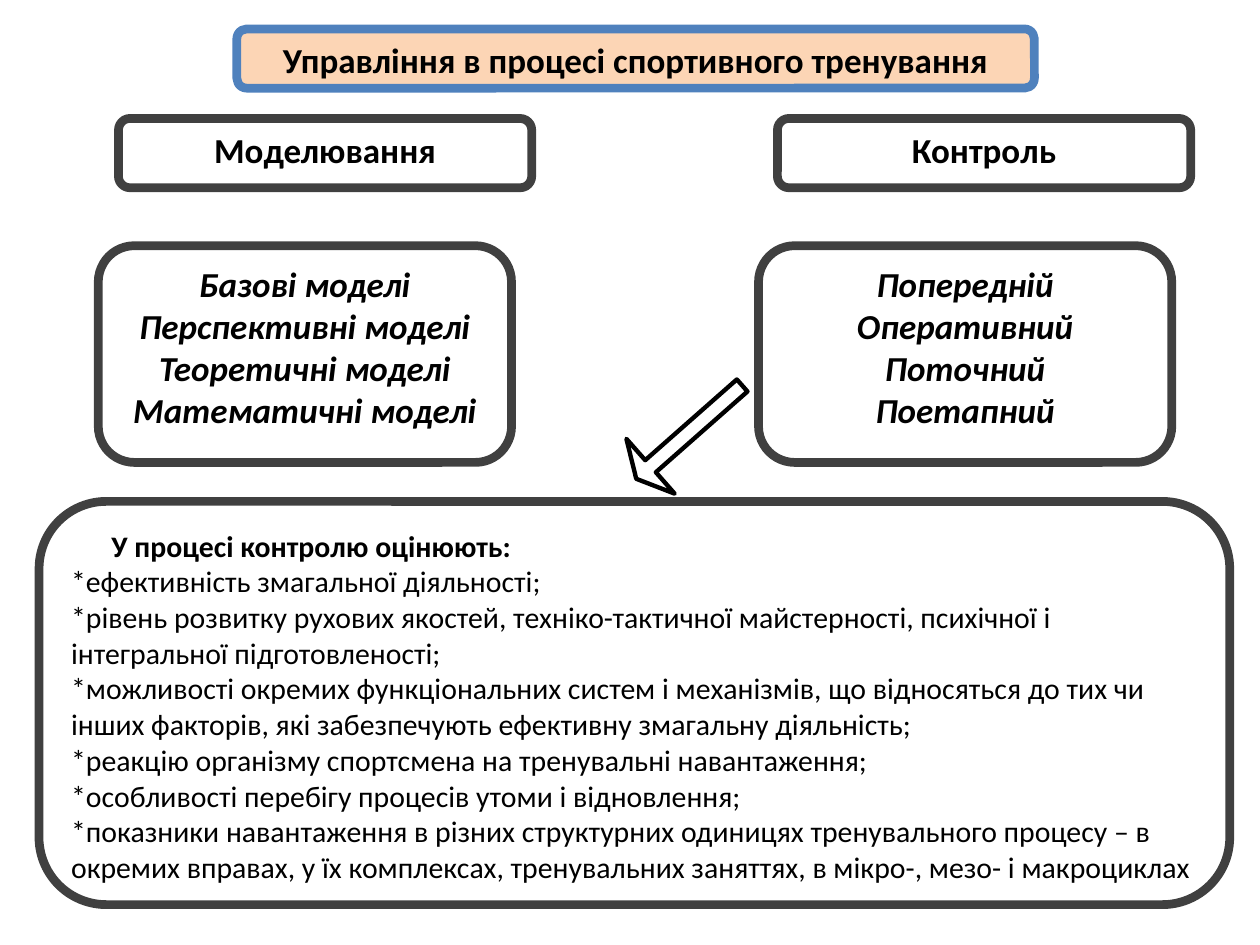
"""Build a slide on management in the process of sports training."""
from dataclasses import dataclass

from pptx import Presentation
from pptx.dml.color import RGBColor
from pptx.enum.shapes import MSO_SHAPE
from pptx.enum.text import MSO_ANCHOR, PP_ALIGN
from pptx.util import Inches, Pt

ROUNDED = MSO_SHAPE.ROUNDED_RECTANGLE
DOWN_ARROW = MSO_SHAPE.DOWN_ARROW
TOP = MSO_ANCHOR.TOP
CENTER, LEFT = PP_ALIGN.CENTER, PP_ALIGN.LEFT

BLACK, WHITE, GRAY = "000000", "FFFFFF", "404040"
PEACH, BLUE = "FCD5B5", "4F81BD"
FONT = "Calibri"
COLUMN_WIDTH = 3.28
HEADING_TOP, HEADING_HEIGHT = 0.94, 0.55
LIST_TOP, LIST_HEIGHT = 1.95, 1.72


@dataclass(frozen=True)
class Frame:
    left: float
    top: float
    width: float
    height: float


@dataclass(frozen=True)
class Branch:
    heading: str
    kinds: tuple[str, ...]
    heading_left: float
    list_left: float


BRANCHES = (
    Branch(
        "Моделювання",
        ("Базові моделі", "Перспективні моделі", "Теоретичні моделі", "Математичні моделі"),
        0.94, 0.78,
    ),
    Branch(
        "Контроль",
        ("Попередній", "Оперативний", "Поточний", "Поетапний"),
        6.17, 6.02,
    ),
)

CRITERIA = (
    "ефективність змагальної діяльності;",
    "рівень розвитку рухових якостей, техніко-тактичної майстерності, "
    "психічної і інтегральної підготовленості;",
    "можливості окремих функціональних систем і механізмів, що відносяться до тих чи "
    "інших факторів, які забезпечують ефективну змагальну діяльність;",
    "реакцію організму спортсмена на тренувальні навантаження;",
    "особливості перебігу процесів утоми і відновлення;",
    "показники навантаження в різних структурних одиницях тренувального процесу – в "
    "окремих вправах, у їх комплексах, тренувальних заняттях, в мікро-, мезо- і макроциклах",
)


def color(value: str) -> RGBColor:
    """Turn a hex string into a colour."""
    return RGBColor.from_string(value)


def add_outlined(slide, kind, frame: Frame, fill: str = WHITE,
                 line: str = GRAY, line_width: float = 5):
    """Draw a filled and outlined preset shape."""
    shape = slide.shapes.add_shape(
        kind, Inches(frame.left), Inches(frame.top), Inches(frame.width), Inches(frame.height)
    )
    shape.shadow.inherit = False
    shape.fill.solid()
    shape.fill.fore_color.rgb = color(fill)
    shape.line.color.rgb = color(line)
    shape.line.width = Pt(line_width)
    return shape


def write(shape, *lines: str, size: float = 20, bold: bool = True, italic: bool = False,
          align=CENTER, first_indent: float = 0, first_bold: bool = False) -> None:
    """Write one paragraph per line, with an optional indented bold opening."""
    text_frame = shape.text_frame
    text_frame.word_wrap = True
    text_frame.vertical_anchor = TOP
    for index, line in enumerate(lines):
        opening = index == 0
        paragraph = text_frame.paragraphs[0] if opening else text_frame.add_paragraph()
        paragraph.alignment = align
        if opening and first_indent:
            paragraph._p.get_or_add_pPr().set("indent", str(Inches(first_indent)))
        run = paragraph.add_run()
        run.text = line
        run.font.name = FONT
        run.font.size = Pt(size)
        run.font.bold = bold or (opening and first_bold)
        run.font.italic = italic
        run.font.color.rgb = color(BLACK)


def add_branch(slide, branch: Branch) -> None:
    """Draw a branch heading and the list of its kinds."""
    heading = Frame(branch.heading_left, HEADING_TOP, COLUMN_WIDTH, HEADING_HEIGHT)
    write(add_outlined(slide, ROUNDED, heading), branch.heading)
    kinds = Frame(branch.list_left, LIST_TOP, COLUMN_WIDTH, LIST_HEIGHT)
    write(add_outlined(slide, ROUNDED, kinds), *branch.kinds, italic=True)


def main() -> None:
    """Build and save the slide."""
    presentation = Presentation()
    presentation.slide_width, presentation.slide_height = Inches(10), Inches(7.5)
    slide = presentation.slides.add_slide(presentation.slide_layouts[6])

    title = add_outlined(slide, ROUNDED, Frame(1.88, 0.23, 6.33, 0.47), PEACH, BLUE)
    write(title, "Управління в процесі спортивного тренування")

    for branch in BRANCHES:
        add_branch(slide, branch)

    assessment = add_outlined(slide, ROUNDED, Frame(0.31, 3.98, 9.45, 3.2))
    write(assessment, "У процесі контролю оцінюють:", *(f"*{item}" for item in CRITERIA),
          size=17, bold=False, align=LEFT, first_indent=0.32, first_bold=True)

    arrow = add_outlined(slide, DOWN_ARROW, Frame(5.18, 2.87, 0.58, 1.12),
                         line=BLACK, line_width=2.5)
    arrow.adjustments[0], arrow.adjustments[1] = 0.22, 0.26
    arrow.rotation = 48.6

    presentation.save("out.pptx")


if __name__ == "__main__":
    main()
